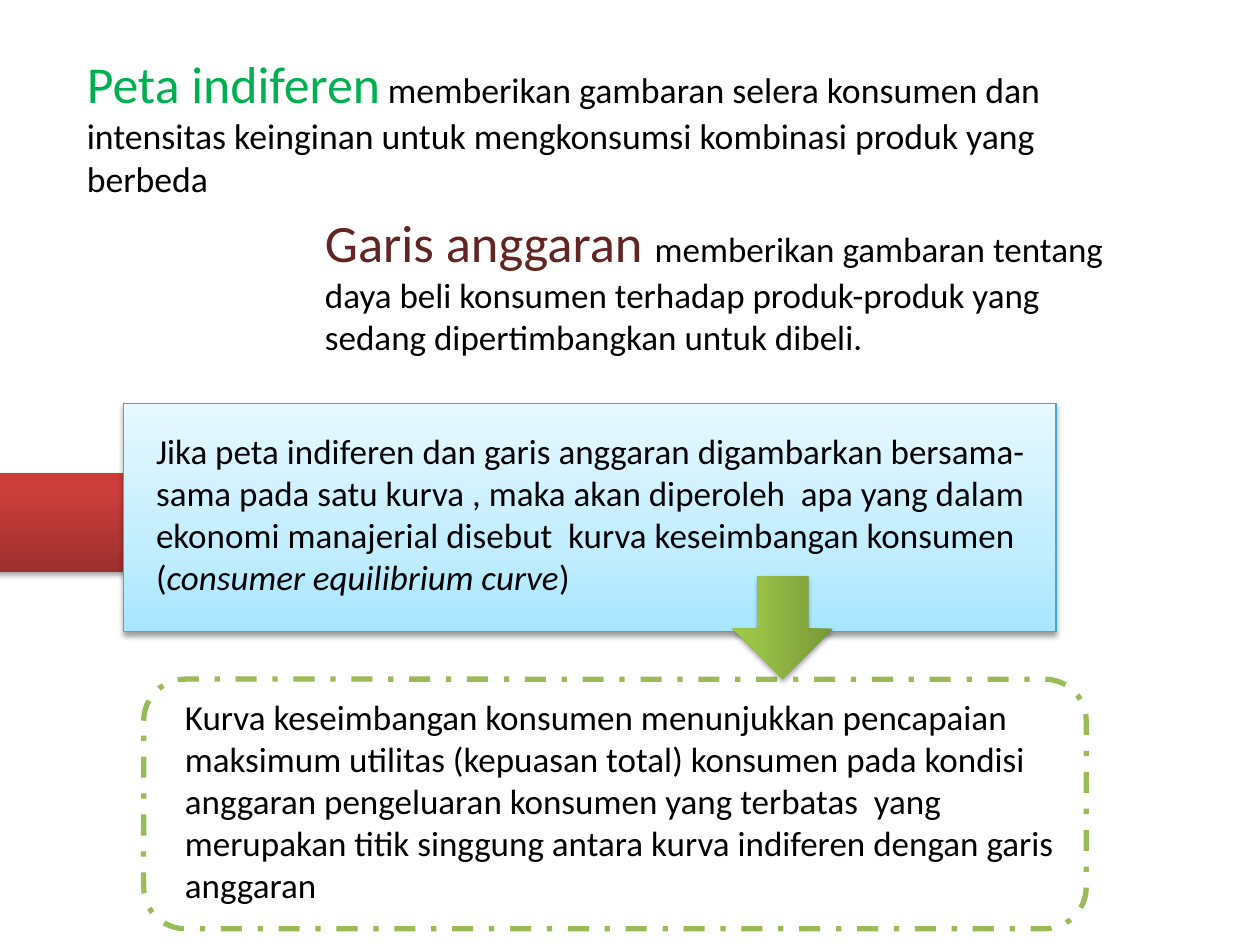
from lxml import etree
from pptx import Presentation
from pptx import util as u
from pptx.dml.color import RGBColor
from pptx.enum import dml, shapes
from pptx.oxml import parse_xml
from pptx.oxml.ns import nsdecls, qn

Pt = u.Pt
color = RGBColor.from_string


def write(page, place, spans, font="Calibri"):
    box = page.shapes.add_textbox(*map(Pt, place))
    box.text_frame.word_wrap = True
    para = box.text_frame.paragraphs[0]
    for words, size, tint, italic in spans:
        span = para.add_run()
        span.text = words
        span.font.name = font
        span.font.size = Pt(size)
        span.font.italic = italic
        span.font.color.rgb = color(tint)


def shade(shape, stops, angle, opacity):
    props = shape._element.spPr
    entries = "".join(
        f'<a:gs pos="{pos * 1000}"><a:srgbClr val="{tint}"/></a:gs>' for pos, tint in stops
    )
    gradient = parse_xml(
        f'<a:gradFill {nsdecls("a")} rotWithShape="1"><a:gsLst>{entries}</a:gsLst>'
        f'<a:lin ang="{angle * 60000}" scaled="0"/></a:gradFill>'
    )
    props.find(qn("a:prstGeom")).addnext(gradient)
    shape.shadow.inherit = False
    shadow = etree.SubElement(
        props.find(qn("a:effectLst")), qn("a:outerShdw"),
        blurRad=str(Pt(3.1)), dist=str(Pt(1.7)), dir="5400000", rotWithShape="0",
    )
    tint = etree.SubElement(shadow, qn("a:srgbClr"), val="000000")
    etree.SubElement(tint, qn("a:alpha"), val=str(opacity * 1000))


deck = Presentation()
deck.slide_width, deck.slide_height = Pt(720), Pt(540)
page = deck.slides.add_slide(deck.slide_layouts[6])
kinds = shapes.MSO_SHAPE

frame = page.shapes.add_shape(kinds.ROUNDED_RECTANGLE, Pt(82.1), Pt(388.1), Pt(538.6), Pt(142.6))
frame.shadow.inherit = False
frame.fill.solid()
frame.fill.fore_color.rgb = color("FFFFFF")
frame.line.color.rgb = color("9BBB59")
frame.line.width = Pt(3)
frame.line.dash_style = dml.MSO_LINE.DASH_DOT

bar = page.shapes.add_shape(kinds.RECTANGLE, Pt(-14.4), Pt(270), Pt(96.5), Pt(56.9))
bar.line.fill.background()
shade(bar, [(0, "9C2F2D"), (80, "CB3E3A"), (100, "CE3B37")], 270, 35)

panel = page.shapes.add_shape(kinds.RECTANGLE, Pt(70.6), Pt(230.4), Pt(532.8), Pt(130.3))
panel.line.color.rgb = color("46AAC5")
panel.line.width = Pt(0.75)
shade(panel, [(0, "A7E6FF"), (35, "C1EDFF"), (100, "E7F8FF")], 270, 38)

write(page, (42.5, 25.9, 596.2, 85), [
    ("Peta indiferen", 29.6, "00B050", None),
    (" ", 18.5, "00B050", None),
    ("memberikan gambaran selera konsumen dan intensitas keinginan untuk "
     "mengkonsumsi kombinasi produk yang berbeda", 20.4, "000000", None),
])
write(page, (178.6, 116.6, 481.7, 94.3), [
    ("Garis anggaran ", 30, "632523", None),
    ("memberikan gambaran tentang daya beli konsumen terhadap produk-produk "
     "yang sedang dipertimbangkan untuk dibeli.", 20, "000000", None),
])
write(page, (82.1, 241.9, 538.6, 104.4), [
    ("Jika peta indiferen dan garis anggaran digambarkan bersama-sama pada satu "
     "kurva , maka akan diperoleh  apa yang dalam ekonomi manajerial disebut  "
     "kurva keseimbangan konsumen (", 20, "000000", None),
    ("consumer equilibrium curve", 20, "000000", True),
    (")", 20, "000000", None),
])
write(page, (98.6, 393.8, 516.2, 131.8), [
    ("Kurva keseimbangan konsumen menunjukkan pencapaian maksimum utilitas "
     "(kepuasan total) konsumen pada kondisi anggaran pengeluaran konsumen yang "
     "terbatas  yang merupakan titik singgung antara kurva indiferen dengan garis "
     "anggaran", 20, "000000", None),
])

arrow = page.shapes.add_shape(kinds.DOWN_ARROW, Pt(418.6), Pt(329), Pt(57.6), Pt(59))
arrow.line.fill.background()
shade(arrow, [(0, "779737"), (80, "9BC348"), (100, "9DC746")], 180, 35)

deck.save("out.pptx")
